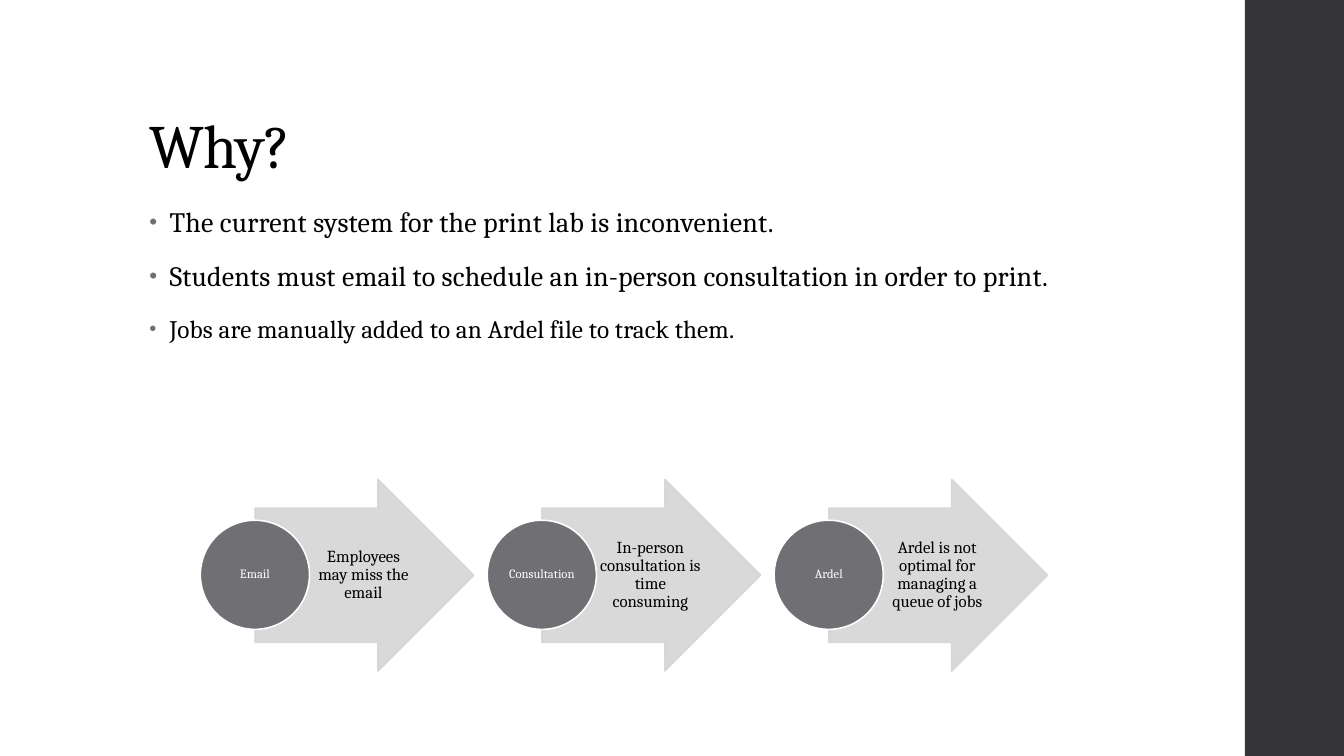
from lxml.etree import SubElement
from pptx import Presentation
from pptx.dml.color import RGBColor
from pptx.enum.shapes import MSO_SHAPE
from pptx.enum.text import MSO_ANCHOR, MSO_AUTO_SIZE, PP_ALIGN
from pptx.oxml.ns import qn
from pptx.util import Cm, Pt

BLACK = RGBColor(0x00, 0x00, 0x00)
WHITE = RGBColor(0xFF, 0xFF, 0xFF)
CHARCOAL = RGBColor(0x35, 0x35, 0x37)
GRAY = RGBColor(0x6F, 0x6F, 0x74)
LIGHT_GRAY = RGBColor(0xD5, 0xD5, 0xD6)

BULLETS = [
    ("The current system for the print lab is inconvenient.", 20),
    ("Students must email to schedule an in-person consultation in order to print.", 20),
    ("Jobs are manually added to an Ardel file to track them.", 18),
]
STEPS = [
    ("Email", "Employees may miss the email"),
    ("Consultation", "In-person consultation is time consuming"),
    ("Ardel", "Ardel is not optimal for managing a queue of jobs"),
]
STEP_PITCH = 7.23


def format_paragraph(paragraph, size, color, alignment, line_spacing, tracking=0):
    paragraph.alignment = alignment
    paragraph.line_spacing = line_spacing
    for run in paragraph.runs:
        run.font.name = "Cambria"
        run.font.size = Pt(size)
        run.font.color.rgb = color
        run._r.get_or_add_rPr().set("spc", str(tracking))


def add_filled_shape(kind, left, top, width, height, fill, line):
    shape = slide.shapes.add_shape(kind, Cm(left), Cm(top), Cm(width), Cm(height))
    shape.shadow.inherit = False
    shape.fill.solid()
    shape.fill.fore_color.rgb = fill
    shape.line.color.rgb = line
    shape.line.width = Pt(1.1)
    return shape


presentation = Presentation()
presentation.slide_width = Cm(33.87)
presentation.slide_height = Cm(19.05)
slide = presentation.slides.add_slide(presentation.slide_layouts[1])

# Side bar
bar = add_filled_shape(MSO_SHAPE.RECTANGLE, 31.37, 0, 2.5, 19.05, CHARCOAL, CHARCOAL)
bar.line.fill.background()

# Title
title = slide.shapes.title
title.left, title.top, title.width, title.height = Cm(3.51), Cm(1.02), Cm(26.92), Cm(3.68)
title.text_frame.text = "Why?"
title.text_frame.auto_size = MSO_AUTO_SIZE.NONE
title.text_frame.vertical_anchor = MSO_ANCHOR.BOTTOM
format_paragraph(title.text_frame.paragraphs[0], 44, BLACK, PP_ALIGN.LEFT, 0.9, -50)

# Bullet list
body = slide.placeholders[1]
body.left, body.top, body.width, body.height = Cm(3.51), Cm(5.08), Cm(23.88), Cm(12.09)
body.text_frame.text = "\n".join(text for text, size in BULLETS)
body.text_frame.auto_size = MSO_AUTO_SIZE.NONE
for paragraph, (text, size) in zip(body.text_frame.paragraphs, BULLETS):
    format_paragraph(paragraph, size, BLACK, PP_ALIGN.LEFT, 0.95, 10)
    paragraph.space_before = Pt(14)
    paragraph.space_after = Pt(2)
    properties = paragraph._p.get_or_add_pPr()
    properties.set("marL", str(Cm(0.51)))
    properties.set("indent", str(Cm(-0.51)))
    bullet_color = SubElement(properties, qn("a:buClr"))
    SubElement(bullet_color, qn("a:srgbClr"), val=str(GRAY))
    SubElement(properties, qn("a:buSzPct"), val="80000")
    SubElement(properties, qn("a:buFont"), typeface="Arial")
    SubElement(properties, qn("a:buChar"), char="•")

# Process: an arrow with a caption and a labelled circle for each step
for index, (label, problem) in enumerate(STEPS):
    offset = index * STEP_PITCH
    arrow = add_filled_shape(MSO_SHAPE.RIGHT_ARROW, 6.43 + offset, 12.08, 5.51, 4.83,
                             LIGHT_GRAY, LIGHT_GRAY)
    arrow.adjustments[0] = 0.7
    arrow.adjustments[1] = 0.5
    for color in arrow._element.spPr.iter(qn("a:srgbClr")):
        SubElement(color, qn("a:alpha"), val="90000")
    caption = slide.shapes.add_textbox(Cm(7.8 + offset), Cm(12.8), Cm(2.69), Cm(3.38))
    circle = add_filled_shape(MSO_SHAPE.OVAL, 5.05 + offset, 13.11, 2.75, 2.75, GRAY, WHITE)

    for shape, text, size, color, left_inset, right_inset in (
        (caption, problem, 12, BLACK, 0.08, 0.05),
        (circle, label, 9, WHITE, 0.03, 0.03),
    ):
        frame = shape.text_frame
        frame.word_wrap = True
        frame.vertical_anchor = MSO_ANCHOR.MIDDLE
        frame.margin_left, frame.margin_right = Cm(left_inset), Cm(right_inset)
        frame.margin_top = frame.margin_bottom = Cm(0.03)
        frame.text = text
        format_paragraph(frame.paragraphs[0], size, color, PP_ALIGN.CENTER, 0.9)

presentation.save("out.pptx")
